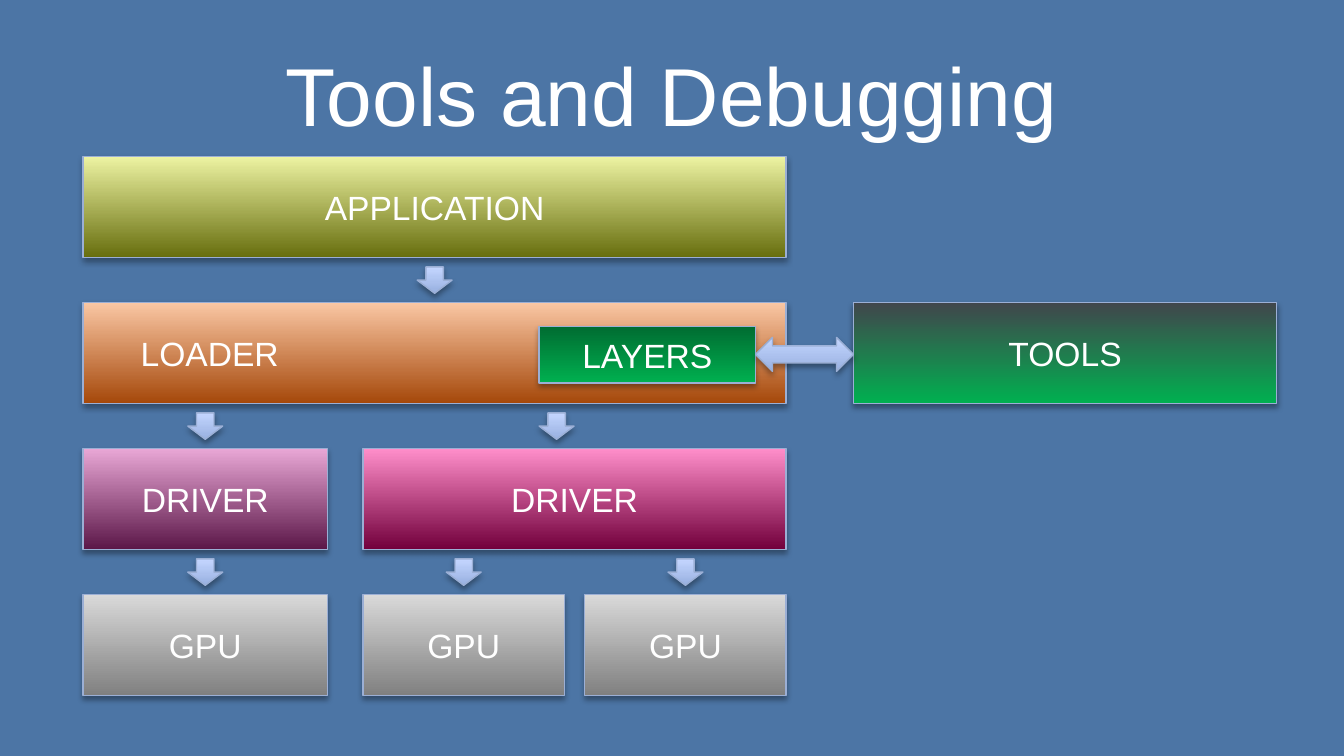
from dataclasses import dataclass

from lxml import etree
from pptx import Presentation
from pptx import util as u
from pptx.dml.color import RGBColor
from pptx.enum import shapes, text
from pptx.oxml import ns

BLUE = RGBColor(0x4C, 0x75, 0xA5)
WHITE = RGBColor(0xFF, 0xFF, 0xFF)
EDGE = RGBColor(0x9B, 0xAF, 0xD5)
ICE = (RGBColor(0x98, 0xB0, 0xE0), RGBColor(0xC4, 0xD6, 0xFF))
OLIVE = (RGBColor(0x67, 0x6E, 0x0E), RGBColor(0xED, 0xF3, 0xA2))
RUST = (RGBColor(0xA5, 0x48, 0x0A), RGBColor(0xFA, 0xC7, 0xA4))
PLUM = (RGBColor(0x5B, 0x17, 0x48), RGBColor(0xE9, 0xA7, 0xD6))
PINK = (RGBColor(0x72, 0x00, 0x3C), RGBColor(0xFF, 0x8E, 0xCA))
GRAY = (RGBColor(0x80, 0x80, 0x80), RGBColor(0xD9, 0xD9, 0xD9))
SLATE = (RGBColor(0x00, 0xB0, 0x50), RGBColor(0x41, 0x46, 0x4C))
GREEN = (RGBColor(0x00, 0xB0, 0x50), RGBColor(0x00, 0x6C, 0x31))

FONT = "Arial"
TOP, PITCH, HIGH = 2.96, 2.76, 1.91
LEFT, MID, RIGHT = 1.57, 6.86, 16.13
FULL, THIN, WIDE, CARD = 13.29, 4.62, 8.0, 3.81
LAST = MID + WIDE - CARD
TIP_W, TIP_H = 0.66, 0.5
KIND = shapes.MSO_SHAPE


@dataclass
class Box:
    label: str
    left: float
    row: int
    width: float
    tones: tuple[RGBColor, RGBColor]
    inset: float = 0


@dataclass
class Tip:
    mid: float
    row: int


BOXES = [
    Box("APPLICATION", LEFT, 0, FULL, OLIVE),
    Box("LOADER", LEFT, 1, FULL, RUST, 1.09),
    Box("DRIVER", LEFT, 2, THIN, PLUM),
    Box("DRIVER", MID, 2, WIDE, PINK),
    Box("GPU", LEFT, 3, THIN, GRAY),
    Box("GPU", MID, 3, CARD, GRAY),
    Box("GPU", LAST, 3, CARD, GRAY),
    Box("TOOLS", RIGHT, 1, WIDE, SLATE),
]
TIPS = [
    Tip(LEFT + FULL / 2, 0),
    Tip(LEFT + THIN / 2, 1),
    Tip(10.52, 1),
    Tip(LEFT + THIN / 2, 2),
    Tip(MID + CARD / 2, 2),
    Tip(LAST + CARD / 2, 2),
]


def add_shade(shape) -> None:
    shape.shadow.inherit = False
    glow = shape._element.spPr.find(ns.qn("a:effectLst"))
    outer = etree.SubElement(
        glow, ns.qn("a:outerShdw"), blurRad=str(u.Pt(3.1)), dist=str(u.Pt(1.8)),
        dir="5400000", rotWithShape="0")
    tint = etree.SubElement(outer, ns.qn("a:srgbClr"), val="000000")
    etree.SubElement(tint, ns.qn("a:alpha"), val="35000")


def add_form(slide, kind, left: float, top: float, width: float, high: float, tones):
    form = slide.shapes.add_shape(kind, u.Cm(left), u.Cm(top), u.Cm(width), u.Cm(high))
    form.fill.gradient()
    form.fill.gradient_angle = 90
    for stop, tone in zip(form.fill.gradient_stops, tones):
        stop.color.rgb = tone
    form.line.color.rgb = EDGE
    form.line.width = u.Pt(0.75)
    add_shade(form)
    return form


def set_text(shape, label: str, size: int, inset: float = 0) -> None:
    frame = shape.text_frame
    frame.text = label
    frame.word_wrap = True
    frame.vertical_anchor = text.MSO_ANCHOR.MIDDLE
    line = frame.paragraphs[0]
    line.alignment = text.PP_ALIGN.LEFT if inset else text.PP_ALIGN.CENTER
    if inset:
        frame.margin_left = u.Cm(inset)
    font = line.runs[0].font
    font.name = FONT
    font.size = u.Pt(size)
    font.color.rgb = WHITE


def add_box(slide, box: Box) -> None:
    form = add_form(slide, KIND.RECTANGLE, box.left, TOP + box.row * PITCH,
                    box.width, HIGH, box.tones)
    set_text(form, box.label, 18, box.inset)


def add_tip(slide, tip: Tip) -> None:
    gap = PITCH - HIGH
    top = TOP + tip.row * PITCH + HIGH + (gap - TIP_H) / 2
    add_form(slide, KIND.DOWN_ARROW, tip.mid - TIP_W / 2, top, TIP_W, TIP_H, ICE)


def main() -> None:
    deck = Presentation()
    deck.slide_width, deck.slide_height = u.Cm(25.4), u.Cm(14.29)
    slide = deck.slides.add_slide(deck.slide_layouts[6])
    slide.background.fill.solid()
    slide.background.fill.fore_color.rgb = BLUE
    title = slide.shapes.add_textbox(u.Cm(1.27), u.Cm(0.58), u.Cm(22.86), u.Cm(2.39))
    set_text(title, "Tools and Debugging", 44)
    for box in BOXES:
        add_box(slide, box)
    for tip in TIPS:
        add_tip(slide, tip)
    layer = add_form(slide, KIND.RECTANGLE, 10.19, 6.17, 4.09, 1.07, GREEN)
    set_text(layer, "LAYERS", 18)
    add_form(slide, KIND.LEFT_RIGHT_ARROW, 14.28, 6.38, 1.85, 0.64, ICE)
    deck.save("out.pptx")


if __name__ == "__main__":
    main()
